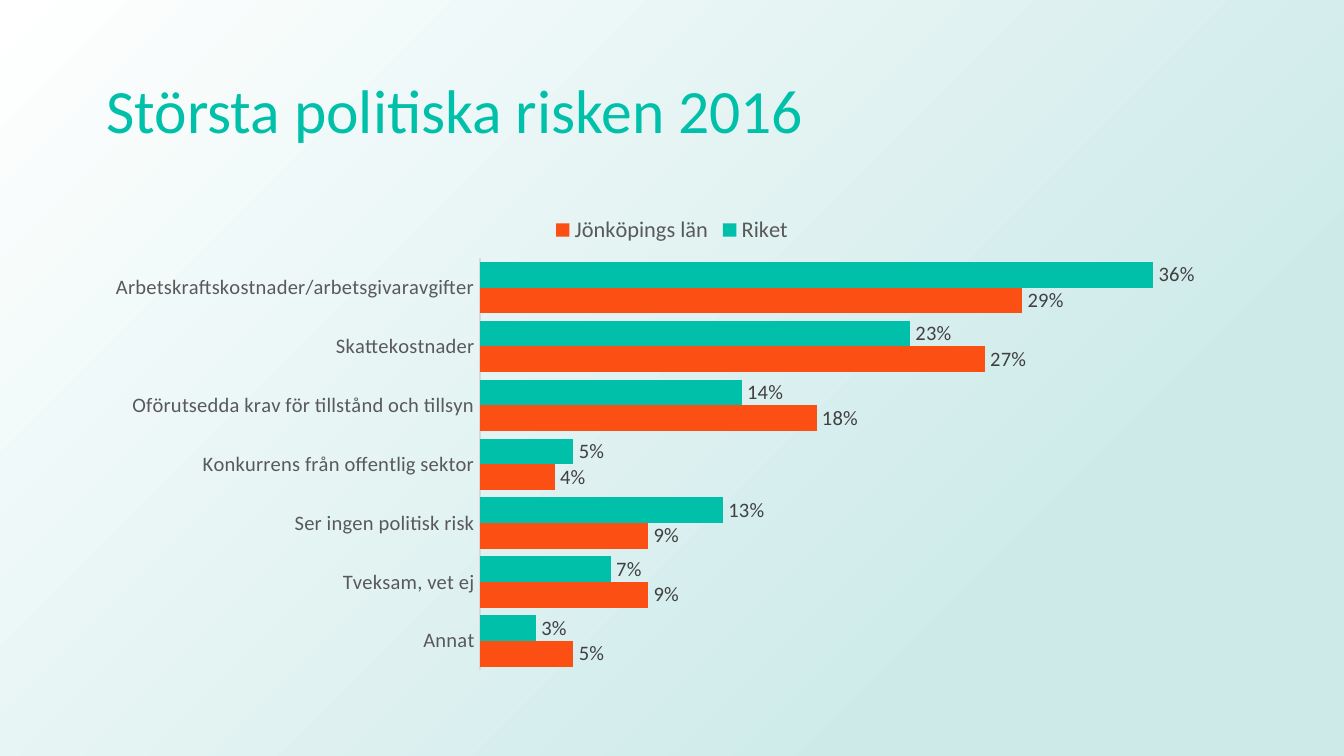
from lxml.etree import SubElement
from pptx import Presentation
from pptx.chart.data import CategoryChartData
from pptx.dml.color import RGBColor
from pptx.enum.chart import XL_CHART_TYPE as ChartType
from pptx.enum.chart import XL_LABEL_POSITION as LabelPosition
from pptx.enum.chart import XL_LEGEND_POSITION as LegendPosition
from pptx.enum.chart import XL_TICK_MARK as TickMark
from pptx.enum.shapes import MSO_SHAPE as Shape
from pptx.enum.text import MSO_ANCHOR as Anchor
from pptx.enum.text import PP_ALIGN as Align
from pptx.oxml.ns import qn
from pptx.util import Inches, Pt

TEAL = RGBColor(0x00, 0xC0, 0xA9)
ORANGE = RGBColor(0xFB, 0x4F, 0x14)
PALE_TEAL = RGBColor(0xCD, 0xEA, 0xE9)
WHITE = RGBColor(0xFF, 0xFF, 0xFF)
BLACK = RGBColor(0x00, 0x00, 0x00)
GREY = RGBColor(0x59, 0x59, 0x59)
DARK_GREY = RGBColor(0x40, 0x40, 0x40)
LIGHT_GREY = RGBColor(0xD9, 0xD9, 0xD9)

WIDTH = 10
HEIGHT = WIDTH * 9 / 16
MARGIN = 0.69

RISKS = [
    "Arbetskraftskostnader/arbetsgivaravgifter",
    "Skattekostnader",
    "Oförutsedda krav för tillstånd och tillsyn",
    "Konkurrens från offentlig sektor",
    "Ser ingen politisk risk",
    "Tveksam, vet ej",
    "Annat",
]
SERIES = [
    ("Riket", TEAL, [0.36, 0.23, 0.14, 0.05, 0.13, 0.07, 0.03]),
    ("Jönköpings län", ORANGE, [0.29, 0.27, 0.18, 0.04, 0.09, 0.09, 0.05]),
]


class SlideBuilder:
    font_name = "Calibri"

    def __init__(self, slide):
        self.slide = slide

    def style_font(self, font, size, color):
        font.name = self.font_name
        font.size = Pt(size)
        font.color.rgb = color

    def backdrop(self):
        """Fill the slide with a circular gradient centred bottom right."""
        shape = self.slide.shapes.add_shape(
            Shape.RECTANGLE, 0, 0, Inches(WIDTH), Inches(HEIGHT))
        shape.shadow.inherit = False
        shape.line.fill.background()
        shape.fill.gradient()
        stops = zip(shape.fill.gradient_stops, [(0.23, PALE_TEAL), (1, WHITE)])
        for stop, (position, color) in stops:
            stop.position = position
            stop.color.rgb = color
        gradient = shape._element.spPr.find(qn("a:gradFill"))
        gradient.remove(gradient.find(qn("a:lin")))
        circle = SubElement(gradient, qn("a:path"), {"path": "circle"})
        SubElement(circle, qn("a:fillToRect"), {"l": "100000", "t": "100000"})
        self.slide.shapes._spTree.insert(2, shape._element)

    def title(self, text, top, height):
        title = self.slide.shapes.title
        title.left, title.top = Inches(MARGIN), Inches(top)
        title.width, title.height = Inches(WIDTH - 2 * MARGIN), Inches(height)
        frame = title.text_frame
        frame.text = text
        frame.vertical_anchor = Anchor.MIDDLE
        paragraph = frame.paragraphs[0]
        paragraph.alignment = Align.LEFT
        paragraph.line_spacing = 0.9
        self.style_font(paragraph.runs[0].font, 33, TEAL)

    def bar_chart(self, categories, series_list, top, height):
        data = CategoryChartData(number_format="0%")
        data.categories = categories
        for name, _, values in series_list:
            data.add_series(name, values)
        chart = self.slide.shapes.add_chart(
            ChartType.BAR_CLUSTERED, Inches(MARGIN), Inches(top),
            Inches(WIDTH - 2 * MARGIN), Inches(height), data).chart
        self.style_font(chart.font, 10, BLACK)
        chart.has_title = False
        chart.has_legend = True
        chart.legend.position = LegendPosition.TOP
        chart.legend.include_in_layout = False
        self.style_font(chart.legend.font, 12, GREY)

        category_axis = chart.category_axis
        category_axis.reverse_order = True
        category_axis.major_tick_mark = TickMark.NONE
        category_axis.minor_tick_mark = TickMark.NONE
        category_axis.format.line.color.rgb = LIGHT_GREY
        category_axis.format.line.width = Pt(0.75)
        self.style_font(category_axis.tick_labels.font, 11, GREY)

        value_axis = chart.value_axis
        value_axis.visible = False
        value_axis.has_major_gridlines = False
        value_axis.minimum_scale = 0
        value_axis.maximum_scale = 0.4

        plot = chart.plots[0]
        plot.gap_width = 30
        plot.overlap = 0
        plot.vary_by_categories = False
        for series, (_, color, _) in zip(plot.series, series_list):
            series.invert_if_negative = False
            series.format.fill.solid()
            series.format.fill.fore_color.rgb = color
            labels = series.data_labels
            labels.show_value = True
            labels.number_format = "0%"
            labels.number_format_is_linked = False
            labels.position = LabelPosition.OUTSIDE_END
            self.style_font(labels.font, 11, DARK_GREY)


def main():
    presentation = Presentation()
    presentation.slide_width = Inches(WIDTH)
    presentation.slide_height = Inches(HEIGHT)
    title_only = presentation.slide_layouts[5]
    builder = SlideBuilder(presentation.slides.add_slide(title_only))
    builder.backdrop()
    builder.title("Största politiska risken 2016", 0.3, 1.09)
    builder.bar_chart(RISKS, SERIES, 1.5, 3.56)
    presentation.save("out.pptx")


if __name__ == "__main__":
    main()
